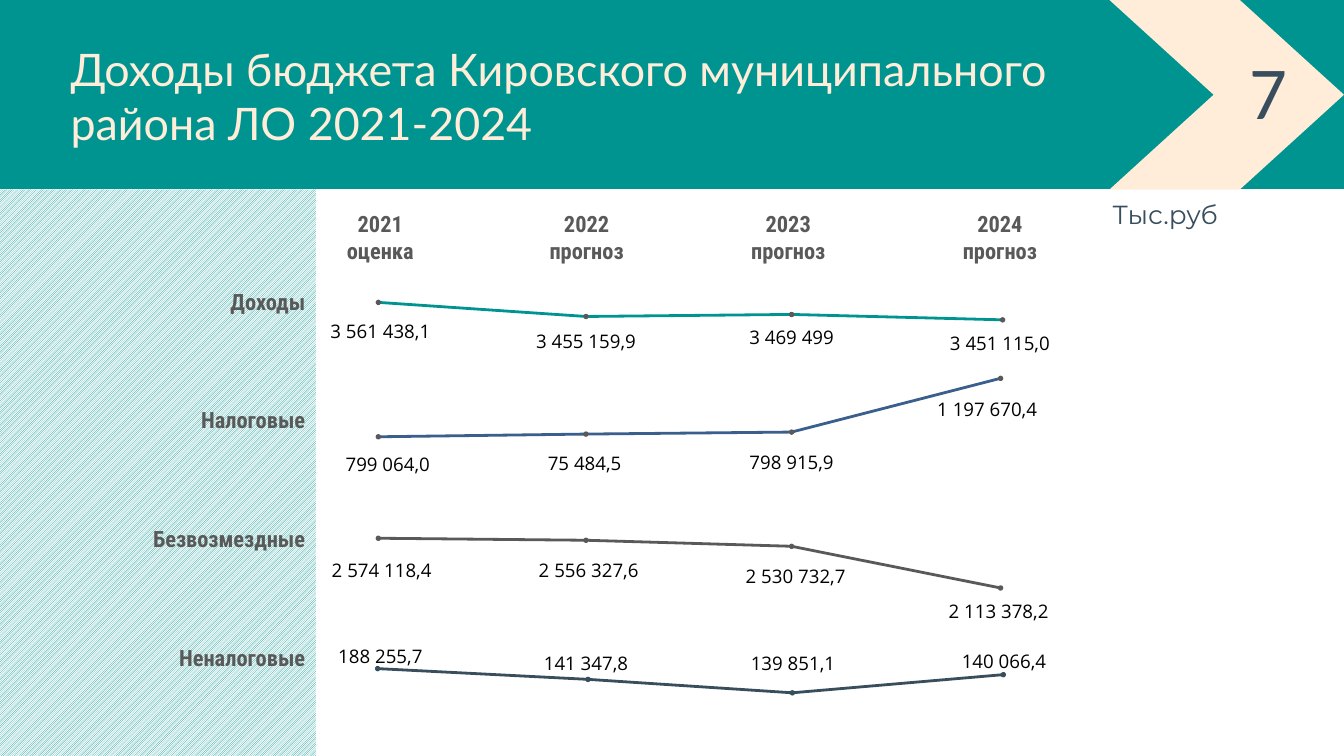
from pptx import Presentation
from pptx import util as u
from pptx.dml.color import RGBColor
from pptx.enum import dml, shapes, text

PX = 9144
TEAL, CREAM, NAVY, GREY = "009490", "FFEDD9", "384E5D", "595959"
LEFT, CENTER, RIGHT = text.PP_ALIGN.LEFT, text.PP_ALIGN.CENTER, text.PP_ALIGN.RIGHT
DOT, LABEL_W, HEAD_W = 8, 194, 160

HEADINGS = [(566, "2021", "оценка"), (873, "2022", "прогноз"),
            (1173, "2023", "прогноз"), (1488, "2024", "прогноз")]

SERIES = [
    ("Доходы", TEAL, GREY,
     [(563, 450), (872, 471), (1178, 468), (1492, 476)],
     [(566, 462, "3 561 438,1"), (872, 477, "3 455 159,9"),
      (1178, 471, "3 469 499"), (1488, 481, "3 451 115,0")]),
    ("Налоговые", "3A5F8C", GREY,
     [(563, 650), (872, 646), (1178, 643), (1489, 563)],
     [(577, 660, "799 064,0"), (870, 659, "75 484,5"),
      (1178, 657, "798 915,9"), (1469, 578, "1 197 670,4")]),
    ("Безвозмездные", GREY, GREY,
     [(563, 801), (872, 804), (1178, 813), (1489, 875)],
     [(568, 819, "2 574 118,4"), (876, 818, "2 556 327,6"),
      (1184, 827, "2 530 732,7"), (1486, 879, "2 113 378,2")]),
    ("Неналоговые", NAVY, NAVY,
     [(562, 995), (875, 1011), (1179, 1031), (1493, 1004)],
     [(566, 946, "188 255,7"), (872, 956, "141 347,8"),
      (1180, 957, "139 851,1"), (1494, 953, "140 066,4")]),
]


def px(*values):
    return [u.Emu(v * PX) for v in values]


def color(hex_string):
    return RGBColor.from_string(hex_string)


def paint(sp, fill):
    sp.shadow.inherit = False
    sp.fill.solid()
    sp.fill.fore_color.rgb = color(fill)
    sp.line.fill.background()


def add_preset(s, kind, x, y, w, h, fill):
    sp = s.shapes.add_shape(kind, *px(x, y, w, h))
    paint(sp, fill)
    return sp


def add_path(s, points, close):
    builder = s.shapes.build_freeform(*points[0], scale=PX)
    builder.add_line_segments(points[1:], close=close)
    sp = builder.convert_to_shape()
    sp.shadow.inherit = False
    return sp


def write(sp, lines, size, font, fill, align=LEFT, spacing=None, bold=False, inset=0):
    tf = sp.text_frame
    tf.word_wrap = True
    tf.auto_size = text.MSO_AUTO_SIZE.NONE
    tf.vertical_anchor = text.MSO_ANCHOR.TOP
    tf.margin_left = tf.margin_right = px(inset)[0]
    tf.margin_top = tf.margin_bottom = px(inset // 2)[0]
    tf.text = "\n".join(lines)
    for p in tf.paragraphs:
        p.alignment = align
        if spacing:
            p.line_spacing = u.Pt(spacing)
        p.font.size = u.Pt(size)
        p.font.name = font
        p.font.bold = bold
        p.font.color.rgb = color(fill)


def add_text(s, x, y, w, h, lines, *style, **options):
    write(s.shapes.add_textbox(*px(x, y, w, h)), lines, *style, **options)


def add_heading(s, x, y, w, h, lines, align):
    add_text(s, x, y, w, h, lines, 24, "Roboto Condensed", GREY,
             align=align, bold=True, inset=10)


def add_header(s):
    add_preset(s, shapes.MSO_SHAPE.RECTANGLE, 0, 0, 2000, 281, TEAL)
    title = s.shapes.title
    title.left, title.top, title.width, title.height = px(105, 62, 1775, 163)
    write(title, ["Доходы бюджета Кировского муниципального", "района ЛО 2021-2024"],
          48, "Lato", CREAM, spacing=57.6)
    s.shapes._spTree.append(title._element)
    chevron = [(1845, 0), (1651, 0), (1806, 141), (1651, 282), (1845, 282), (2000, 141)]
    paint(add_path(s, chevron, True), CREAM)
    add_text(s, 1859, 75, 64, 133, ["7"], 80, "Calibri", NAVY, spacing=89.6)
    add_text(s, 1498, 285, 472, 53, ["Тыс.руб"], 28, "Montserrat", NAVY,
             align=CENTER, spacing=40.6)


def add_side_panel(s):
    sp = add_preset(s, shapes.MSO_SHAPE.RECTANGLE, 0, 282, 470, 843, TEAL)
    sp.fill.patterned()
    sp.fill.pattern = dml.MSO_PATTERN.LIGHT_UPWARD_DIAGONAL
    sp.fill.fore_color.rgb = color(TEAL)
    sp.fill.back_color.rgb = color("FFFFFF")


def add_series(s, line_color, dot_color, points, labels):
    line = add_path(s, points, False)
    line.fill.background()
    line.line.color.rgb = color(line_color)
    line.line.width = u.Pt(3)
    for x, y in points:
        add_preset(s, shapes.MSO_SHAPE.OVAL, x - DOT // 2, y - DOT // 2, DOT, DOT, dot_color)
    for x, y, value in labels:
        add_text(s, x - LABEL_W // 2, y, LABEL_W, 43, [value], 20, "Open Sans", "000000",
                 align=CENTER, spacing=33.6)


def main():
    prs = Presentation()
    prs.slide_width, prs.slide_height = px(2000, 1125)
    s = prs.slides.add_slide(prs.slide_layouts[5])
    add_side_panel(s)
    add_header(s)
    for x, *lines in HEADINGS:
        add_heading(s, x - HEAD_W // 2, 308, HEAD_W, 91, lines, CENTER)
    for i, (name, *series) in enumerate(SERIES):
        add_heading(s, 164, 424 + 353 * i // 2, 300, 50, [name], RIGHT)
        add_series(s, *series)
    prs.save("out.pptx")


if __name__ == "__main__":
    main()
